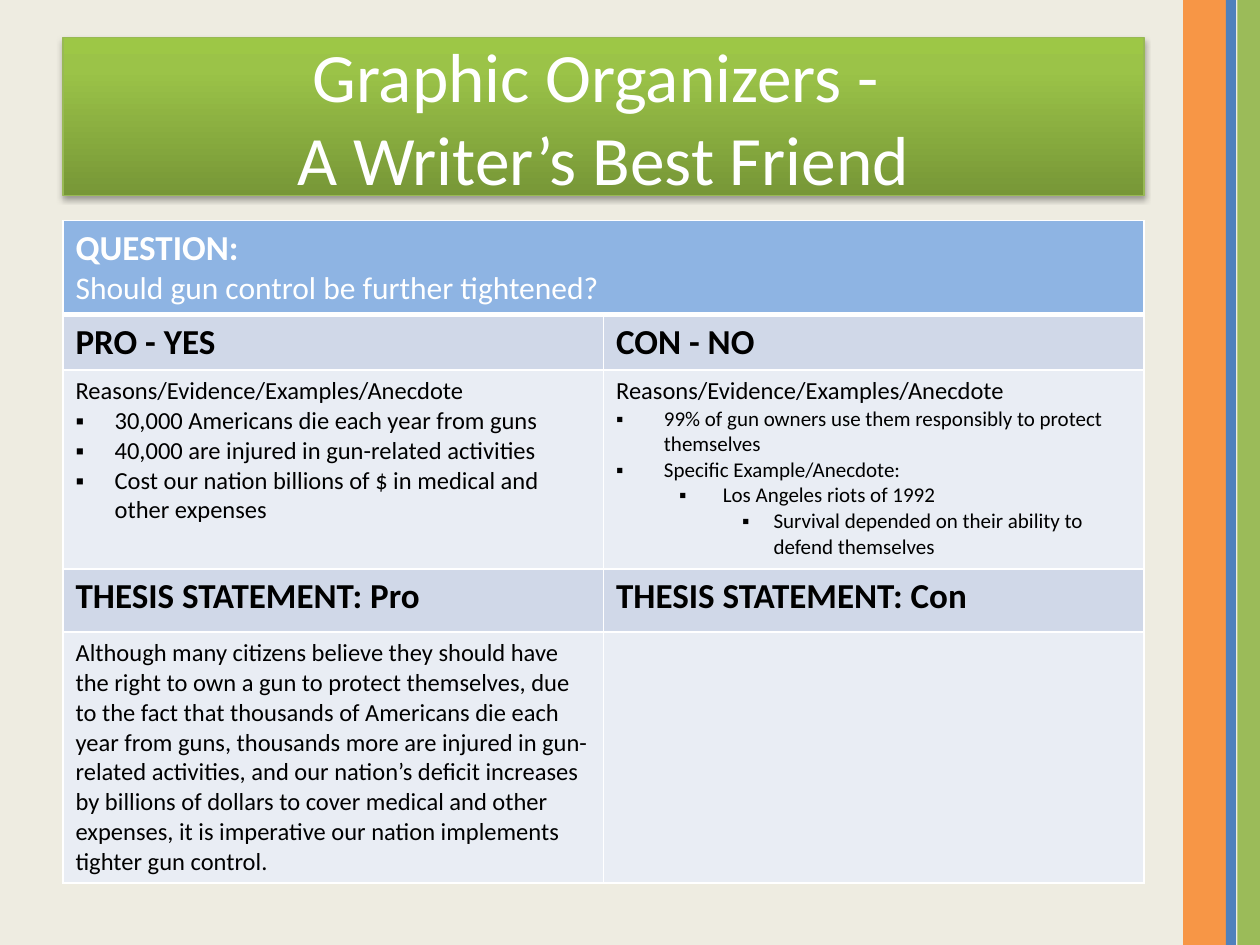
import pptx
import pptx.util
import pptx.dml.color
import pptx.enum.shapes
import pptx.enum.text
import pptx.oxml
import pptx.oxml.ns
from pptx.util import Inches

FONT = "Calibri"
COLORS = {
    "background": "EEECE1", "orange": "F79646", "green": "9BBB59", "blue": "4F81BD",
    "title_dark": "779737", "title_mid": "9BC348", "title_light": "9DC746",
    "title_line": "98B955", "white": "FFFFFF", "black": "000000",
    "question": "8EB4E3", "heading": "D0D8E8", "body": "E9EDF4",
}
ROW_HEIGHTS = [0.67, 0.41, 1.58, 0.5, 1.3]
ROW_FILLS = ["question", "heading", "body", "heading", "body"]

# A paragraph is (text, size, bold, bullet); a bullet is (level, margin, hang, tab).
PRO_BULLET = (0, 0.31, 0.31, None)
CON_BULLETS = [(0, 0.38, 0.38, 0.5), (1, 0.81, 0.31, 1), (2, 1.25, 0.25, 1.5)]
EVIDENCE = ("Reasons/Evidence/Examples/Anecdote", 14, False, None)
THESIS = (
    "Although many citizens believe they should have the right to own a gun to protect "
    "themselves, due to the fact that thousands of Americans die each year from guns, "
    "thousands more are injured in gun-related activities, and our nation’s deficit "
    "increases by billions of dollars to cover medical and other expenses, it is "
    "imperative our nation implements tighter gun control."
)


def heading(text):
    return [(text, 20, True, None)]


CELLS = [
    [heading("QUESTION:") + [("Should gun control be further tightened?", 18, False, None)], []],
    [heading("PRO - YES"), heading("CON - NO")],
    [
        [
            EVIDENCE,
            ("30,000 Americans die each year from guns", 14, False, PRO_BULLET),
            ("40,000 are injured in gun-related activities", 14, False, PRO_BULLET),
            ("Cost our nation billions of $ in medical and other expenses", 14, False, PRO_BULLET),
        ],
        [
            EVIDENCE,
            ("99% of gun owners use them responsibly to protect themselves", 12, False, CON_BULLETS[0]),
            ("Specific Example/Anecdote:", 12, False, CON_BULLETS[0]),
            (" Los Angeles riots of 1992", 12, False, CON_BULLETS[1]),
            ("Survival depended on their ability to defend themselves", 12, False, CON_BULLETS[2]),
        ],
    ],
    [heading("THESIS STATEMENT: Pro"), heading("THESIS STATEMENT: Con")],
    [[(THESIS, 14, False, None)], []],
]


def rgb(name):
    return pptx.dml.color.RGBColor.from_string(COLORS[name])


def xml(tag, attributes="", inner=""):
    """Make one DrawingML element."""
    return pptx.oxml.parse_xml(
        f'<a:{tag} {pptx.oxml.ns.nsdecls("a")} {attributes}>{inner}</a:{tag}>')


def solid(fill, name):
    fill.solid()
    fill.fore_color.rgb = rgb(name)


def format_runs(para, size, color, bold=False):
    for span in para.runs:
        span.font.name = FONT
        span.font.size = pptx.util.Pt(size)
        span.font.bold = bold
        span.font.color.rgb = rgb(color)


def add_stripes(page, left, top, height):
    """Place the vertical bars at the right edge."""
    for offset, width, color in [(0, 0.35, "orange"), (0.43, 0.18, "green"), (0.34, 0.08, "blue")]:
        stripe = page.shapes.add_shape(
            pptx.enum.shapes.MSO_SHAPE.RECTANGLE,
            Inches(left + offset), Inches(top), Inches(width), Inches(height))
        stripe.shadow.inherit = False
        solid(stripe.fill, color)
        stripe.line.fill.background()


def place_title(page, left, top, width, height):
    title = page.shapes.title
    title.left, title.top = Inches(left), Inches(top)
    title.width, title.height = Inches(width), Inches(height)
    stops = "".join(
        f'<a:gs pos="{place * 1000}"><a:srgbClr val="{COLORS[name]}"/></a:gs>'
        for place, name in [(0, "title_dark"), (80, "title_mid"), (100, "title_light")])
    title.line.color.rgb = rgb("title_line")
    title.line.width = pptx.util.Pt(0.75)
    properties = title.line._get_or_add_ln().getparent()
    gradient = xml("gradFill", 'rotWithShape="1"',
                   f'<a:gsLst>{stops}</a:gsLst><a:lin ang="16200000" scaled="0"/>')
    properties.find(pptx.oxml.ns.qn("a:ln")).addprevious(gradient)
    blur, distance = pptx.util.Pt(3.1), pptx.util.Pt(1.8)
    properties.append(xml("effectLst", "", (
        f'<a:outerShdw blurRad="{blur}" dist="{distance}" dir="5400000" rotWithShape="0">'
        f'<a:srgbClr val="{COLORS["black"]}"><a:alpha val="35000"/></a:srgbClr></a:outerShdw>')))

    frame = title.text_frame
    frame.text = "Graphic Organizers - \vA Writer’s Best Friend"
    frame.word_wrap = True
    frame.auto_size = pptx.enum.text.MSO_AUTO_SIZE.NONE
    frame.vertical_anchor = pptx.enum.text.MSO_ANCHOR.MIDDLE
    para = frame.paragraphs[0]
    para.alignment = pptx.enum.text.PP_ALIGN.CENTER
    format_runs(para, 39.6, "white")


def set_bullet(para, level, margin, hang, tab):
    para.level = level
    properties = para._p.get_or_add_pPr()
    properties.set("marL", str(Inches(margin)))
    properties.set("indent", str(-Inches(hang)))
    properties.append(xml("buFont", 'typeface="Arial"'))
    properties.append(xml("buChar", 'char="▪"'))
    if tab:
        properties.append(xml("tabLst", "", f'<a:tab pos="{Inches(tab)}" algn="l"/>'))


def set_borders(cell, row):
    widths = {"lnL": 1, "lnR": 1, "lnT": 3 if row == 1 else 1, "lnB": 3 if row == 0 else 1}
    properties = cell._tc.get_or_add_tcPr()
    for index, (side, width) in enumerate(widths.items()):
        properties.insert(index, xml(
            side, f'w="{pptx.util.Pt(width)}"',
            f'<a:solidFill><a:srgbClr val="{COLORS["white"]}"/></a:solidFill>'))


def fill_cell(cell, paragraphs, color):
    frame = cell.text_frame
    frame.text = "\n".join(text for text, *_ in paragraphs)
    for para, (_, size, bold, bullet) in zip(frame.paragraphs, paragraphs):
        format_runs(para, size, color, bold)
        if bullet:
            set_bullet(para, *bullet)


def add_organizer(page, left, top, width, height):
    """Place the pro and con table."""
    table = page.shapes.add_table(
        len(CELLS), 2, Inches(left), Inches(top), Inches(width), Inches(height)).table
    for column in table.columns:
        column.width = Inches(width / 2)
    for row, contents in enumerate(CELLS):
        table.rows[row].height = Inches(ROW_HEIGHTS[row])
        for column, paragraphs in enumerate(contents):
            cell = table.cell(row, column)
            solid(cell.fill, ROW_FILLS[row])
            set_borders(cell, row)
            if paragraphs:
                fill_cell(cell, paragraphs, "white" if row == 0 else "black")
    table.cell(0, 0).merge(table.cell(0, 1))


def main():
    deck = pptx.Presentation()
    deck.slide_width, deck.slide_height = Inches(10), Inches(7.5)
    page = deck.slides.add_slide(deck.slide_layouts[5])
    solid(page.background.fill, "background")
    add_stripes(page, 9.39, 0, 7.5)
    place_title(page, 0.5, 0.3, 8.58, 1.25)
    add_organizer(page, 0.5, 1.75, 8.58, 5.22)
    deck.save("out.pptx")


if __name__ == "__main__":
    main()
